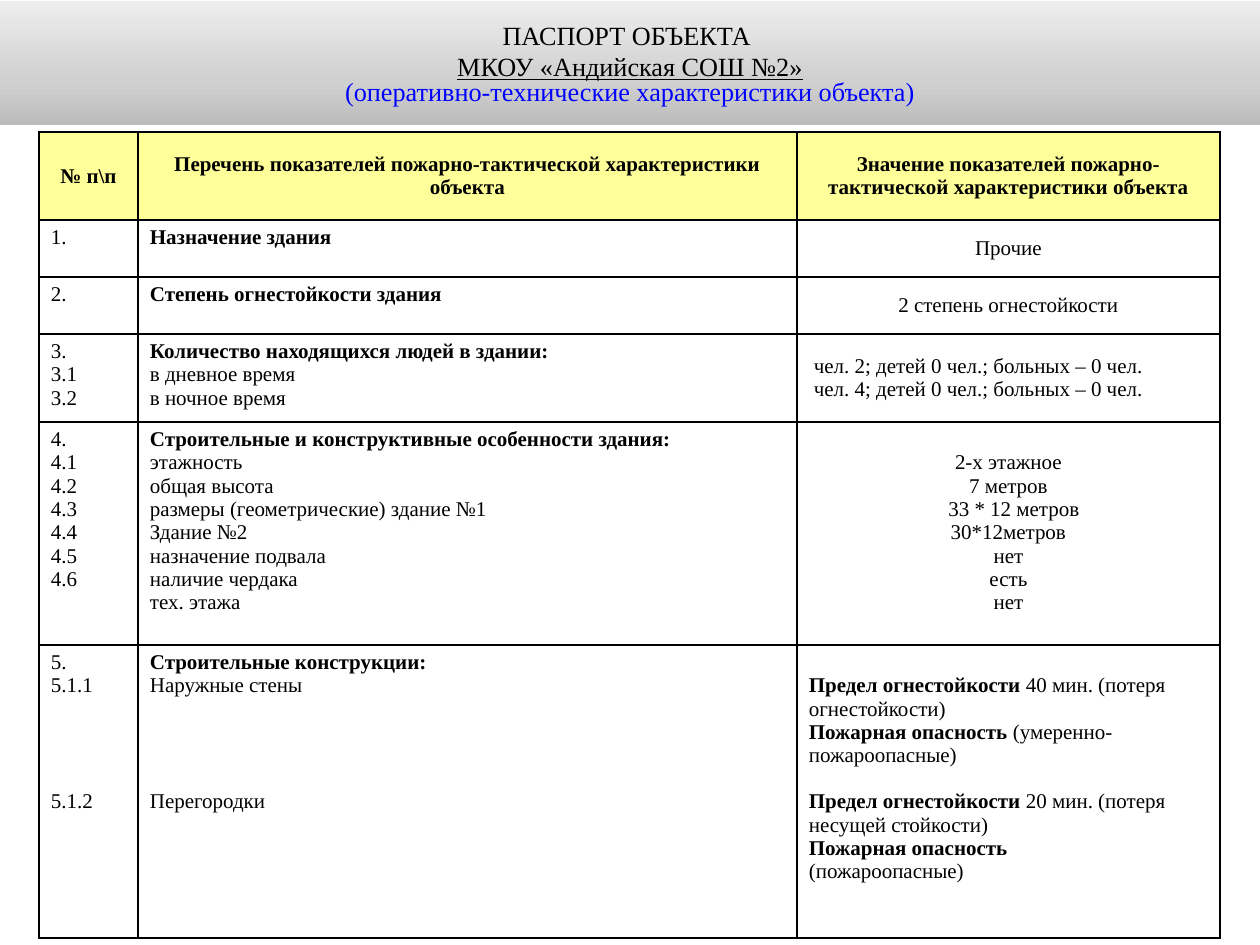
from copy import deepcopy
from dataclasses import dataclass

from lxml.etree import SubElement
from pptx import Presentation
from pptx.dml.color import RGBColor
from pptx.enum.shapes import MSO_SHAPE
from pptx.enum.text import MSO_ANCHOR, PP_ALIGN
from pptx.oxml.ns import qn
from pptx.util import Emu, Pt


@dataclass(frozen=True)
class Theme:
    font: str = "Times New Roman"
    title_size: int = 15
    table_size: int = 12
    line_height: float = 13.3
    ink: str = "000000"
    accent: str = "0000FF"
    header_fill: str = "FFFF99"
    body_fill: str = "FFFFFF"
    banner: tuple = ((0, "BCBCBC"), (0.35, "D0D0D0"), (1, "EDEDED"))


@dataclass
class Line:
    text: str = ""
    lead: str = ""      # bold opening words
    gap: int = 0        # empty lines above
    indent: int = 0     # px


@dataclass
class Entry:
    lines: list
    align: PP_ALIGN = PP_ALIGN.LEFT
    anchor: MSO_ANCHOR = MSO_ANCHOR.TOP
    skipped: int = 0    # empty lines at the top


THEME = Theme()
CENTER, MIDDLE = PP_ALIGN.CENTER, MSO_ANCHOR.MIDDLE


def px(n):
    return Emu(round(n * 914400 / 126))


def rgb(code):
    return RGBColor.from_string(code)


def plain(*texts):
    return [Line(text) for text in texts]


def heading(text):
    return Entry([Line(lead=text)], CENTER, MIDDLE)


def titled(title, *texts):
    return Entry([Line(lead=title), *plain(*texts)])


def centred(text):
    return Entry(plain(text), CENTER, MIDDLE)


COLUMNS = (99, 659, 423)
ROW_HEIGHTS = (88, 57, 57, 88, 223, 293)
ROWS = (
    (heading("№ п\\п"),
     heading("Перечень показателей пожарно-тактической характеристики объекта"),
     heading("Значение показателей пожарно-тактической характеристики объекта")),
    (Entry(plain("1.")), titled("Назначение здания"), centred("Прочие")),
    (Entry(plain("2.")), titled("Степень огнестойкости здания"),
     centred("2 степень огнестойкости")),
    (Entry(plain("3.", "3.1", "3.2")),
     titled("Количество находящихся людей в здании:",
            "в дневное время", "в ночное время"),
     Entry([Line("чел. 2; детей 0 чел.; больных – 0 чел.", indent=5),
            Line("чел. 4; детей 0 чел.; больных – 0 чел.", indent=5)],
           anchor=MIDDLE)),
    (Entry(plain("4.", "4.1", "4.2", "4.3", "4.4", "4.5", "4.6")),
     titled("Строительные и конструктивные особенности здания:",
            "этажность", "общая высота", "размеры (геометрические) здание №1",
            "Здание №2", "назначение подвала", "наличие чердака", "тех. этажа"),
     Entry([*plain("2-х этажное", "7 метров"),
            Line("33 * 12 метров", indent=11),
            *plain("30*12метров", "нет", "есть", "нет")], CENTER, skipped=1)),
    (Entry([*plain("5.", "5.1.1"), Line("5.1.2", gap=4)]),
     Entry([Line(lead="Строительные конструкции:"), Line("Наружные стены"),
            Line("Перегородки", gap=4)]),
     Entry([Line("40 мин. (потеря огнестойкости)", "Предел огнестойкости "),
            Line("(умеренно-пожароопасные)", "Пожарная опасность "),
            Line("20 мин. (потеря несущей стойкости)", "Предел огнестойкости ", gap=1),
            Line(lead="Пожарная опасность"),
            Line("(пожароопасные)")], skipped=1)),
)


def set_font(paragraph, size, color=THEME.ink):
    font = paragraph.font
    font.name, font.size = THEME.font, Pt(size)
    font.color.rgb = rgb(color)
    return font


def paragraphs(frame, count):
    return [frame.paragraphs[0]] + [frame.add_paragraph() for _ in range(count - 1)]


def fill_banner(banner):
    fill = banner.fill
    fill.gradient()
    fill.gradient_angle = 90
    stop_list = banner._element.spPr.find(qn("a:gradFill")).find(qn("a:gsLst"))
    stop_list.append(deepcopy(stop_list[0]))
    for stop, (position, color) in zip(fill.gradient_stops, THEME.banner):
        stop.position = position
        stop.color.rgb = rgb(color)


def add_banner(slide):
    banner = slide.shapes.add_shape(MSO_SHAPE.RECTANGLE, px(0), px(1), px(1260), px(124))
    banner.shadow.inherit = False
    banner.line.fill.background()
    fill_banner(banner)
    frame = banner.text_frame
    frame.word_wrap = True
    frame.vertical_anchor = MIDDLE
    titles = (
        ("ПАСПОРТ ОБЪЕКТА ", THEME.ink, False, 1.0),
        ("МКОУ «Андийская СОШ №2»", THEME.ink, True, 1.0),
        ("(оперативно-технические характеристики объекта)", THEME.accent, False, 0.8),
    )
    for paragraph, (text, color, underline, spacing) in zip(paragraphs(frame, 3), titles):
        paragraph.text = text
        paragraph.alignment = CENTER
        paragraph.line_spacing = spacing
        set_font(paragraph, THEME.title_size, color).underline = underline


def add_borders(cell):
    properties = cell._tc.get_or_add_tcPr()
    for side in ("a:lnL", "a:lnR", "a:lnT", "a:lnB"):
        border = SubElement(properties, qn(side), w=str(Pt(1)))
        SubElement(SubElement(border, qn("a:solidFill")), qn("a:srgbClr"), val=THEME.ink)


def write_line(paragraph, line, align):
    paragraph.alignment = align
    paragraph.space_before = Pt(round(line.gap * THEME.line_height))
    if line.indent:
        paragraph._p.get_or_add_pPr().set("marL", str(px(line.indent)))
    set_font(paragraph, THEME.table_size).bold = bool(line.lead)
    if line.lead:
        paragraph.add_run().text = line.lead
    if line.text:
        detail = paragraph.add_run()
        detail.text = line.text
        if line.lead:
            detail.font.bold = False


def fill_cell(cell, entry, color):
    add_borders(cell)
    cell.fill.solid()
    cell.fill.fore_color.rgb = rgb(color)
    cell.margin_left = cell.margin_right = px(12)
    cell.margin_top = px(6) + Pt(entry.skipped * THEME.line_height)
    cell.margin_bottom = px(6)
    cell.vertical_anchor = entry.anchor
    for paragraph, line in zip(paragraphs(cell.text_frame, len(entry.lines)), entry.lines):
        write_line(paragraph, line, entry.align)


def add_passport_table(slide):
    passport = slide.shapes.add_table(
        len(ROWS), len(COLUMNS), px(39), px(132),
        px(sum(COLUMNS)), px(sum(ROW_HEIGHTS))).table
    for column, width in zip(passport.columns, COLUMNS):
        column.width = px(width)
    for r, (height, entries) in enumerate(zip(ROW_HEIGHTS, ROWS)):
        passport.rows[r].height = px(height)
        color = THEME.body_fill if r else THEME.header_fill
        for c, entry in enumerate(entries):
            fill_cell(passport.cell(r, c), entry, color)


def main():
    deck = Presentation()
    deck.slide_width, deck.slide_height = px(1260), px(945)
    slide = deck.slides.add_slide(deck.slide_layouts[6])
    # Indicator table, then the title banner above it
    add_passport_table(slide)
    add_banner(slide)
    deck.save("out.pptx")


if __name__ == "__main__":
    main()
